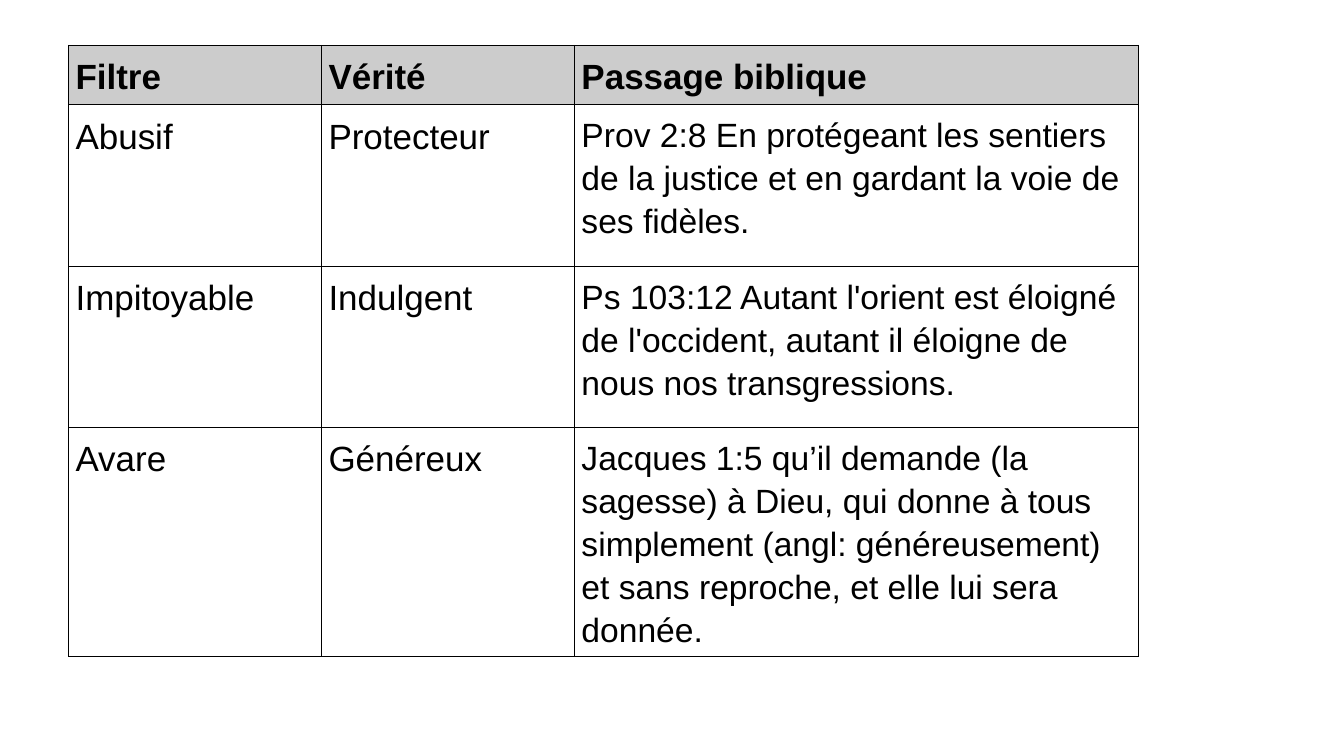
from lxml.etree import SubElement
from pptx import Presentation
from pptx.dml.color import RGBColor
from pptx.oxml.ns import qn
from pptx.util import Pt

# Table content: header first, then one row per filter
ROWS = [
    ("Filtre", "Vérité", "Passage biblique"),
    ("Abusif", "Protecteur",
     "Prov 2:8 En protégeant les sentiers de la justice "
     "et en gardant la voie de ses fidèles."),
    ("Impitoyable", "Indulgent",
     "Ps 103:12 Autant l'orient est éloigné de l'occident, "
     "autant il éloigne de nous nos transgressions."),
    ("Avare", "Généreux",
     "Jacques 1:5 qu’il demande (la sagesse) à Dieu, qui donne à tous "
     "simplement (angl: généreusement) et sans reproche, "
     "et elle lui sera donnée."),
]
WIDTHS = (180.7, 180.7, 402.5)
HEAD, BODY = 42.5, 115.2


def color(code):
    return RGBColor.from_string(code)


class Page:
    font = "Arial"
    ink = "000000"
    shade = "CCCCCC"
    inset = Pt(5)
    rule = Pt(0.75)

    def __init__(self, deck):
        self.slide = deck.slides.add_slide(deck.slide_layouts[6])

    def border(self, cell):
        props = cell._tc.get_or_add_tcPr()
        for side in ("lnL", "lnR", "lnT", "lnB"):
            line = SubElement(props, qn(f"a:{side}"), w=str(self.rule))
            fill = SubElement(line, qn("a:solidFill"))
            SubElement(fill, qn("a:srgbClr"), val=self.ink)

    def cell(self, cell, text, size, head):
        self.border(cell)
        if head:
            cell.fill.solid()
            cell.fill.fore_color.rgb = color(self.shade)
        else:
            cell.fill.background()
        cell.margin_left = cell.margin_right = self.inset
        cell.margin_top = cell.margin_bottom = self.inset
        cell.text = text
        para = cell.text_frame.paragraphs[0]
        para.line_spacing = 1.15
        font = para.font
        font.name, font.size, font.bold = self.font, Pt(size), head
        font.color.rgb = color(self.ink)

    def table(self, left, top, widths, heights, rows):
        grid = self.slide.shapes.add_table(
            len(rows), len(widths), Pt(left), Pt(top),
            Pt(sum(widths)), Pt(sum(heights))).table
        grid.first_row = grid.horz_banding = False
        for col, width in zip(grid.columns, widths):
            col.width = Pt(width)
        for r, (row, height) in enumerate(zip(rows, heights)):
            grid.rows[r].height = Pt(height)
            for c, text in enumerate(row):
                # Bible passages are set slightly smaller
                size = 24 if r > 0 and c == 2 else 25
                self.cell(grid.cell(r, c), text, size, r == 0)


def main():
    deck = Presentation()
    deck.slide_width, deck.slide_height = Pt(960), Pt(540)
    page = Page(deck)
    heights = [HEAD] + [BODY] * (len(ROWS) - 1)
    page.table(49, 32.4, WIDTHS, heights, ROWS)
    deck.save("out.pptx")


if __name__ == "__main__":
    main()
